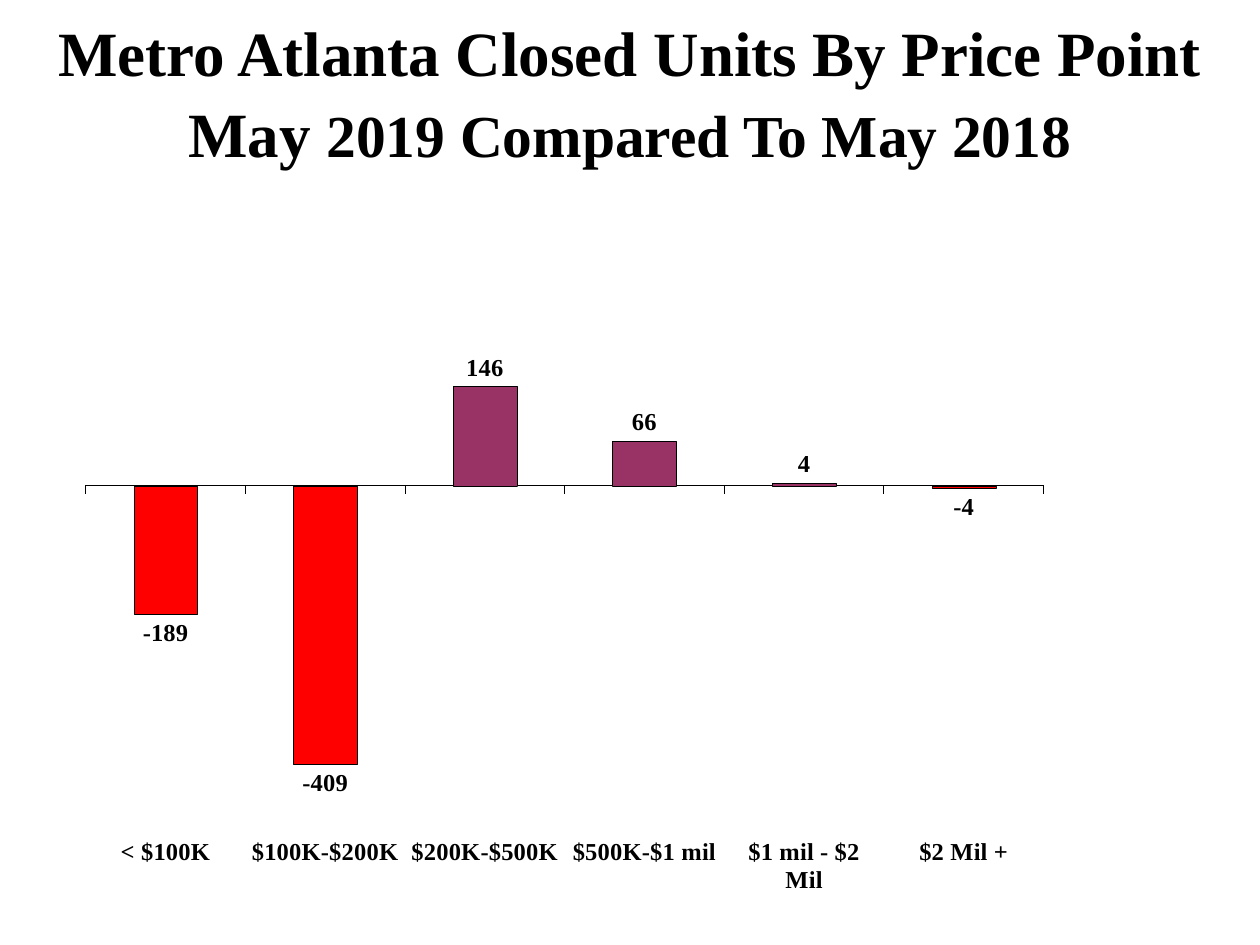
from lxml import etree
from pptx import Presentation
from pptx import util as u
from pptx.chart.data import CategoryChartData
from pptx.dml.color import RGBColor
from pptx.enum import chart as ch, text
from pptx.oxml.ns import qn

COLOURS = {"ink": "000000", "gain": "993366", "loss": "FF0000"}
CLOSED_UNITS = {
    "< $100K": -189,
    "$100K-$200K": -409,
    "$200K-$500K": 146,
    "$500K-$1 mil": 66,
    "$1 mil - $2 Mil": 4,
    "$2 Mil +": -4,
}


def colour(name):
    return RGBColor.from_string(COLOURS[name])


def set_font(font, size, bold=True, ink="ink", face="Times New Roman"):
    font.name, font.size, font.bold = face, u.Pt(size), bold
    font.color.rgb = colour(ink)


def write(paragraph, words, **style):
    run = paragraph.add_run()
    run.text = words
    set_font(run.font, **style)


class SlideBuilder:
    """Hold the slide and draw its heading and column chart."""

    def __init__(self, slide):
        self.slide = slide

    def heading(self, box, lines, spacing=1.07):
        frame = self.slide.shapes.add_textbox(*map(u.Pt, box)).text_frame
        frame.word_wrap = True
        frame.vertical_anchor = text.MSO_ANCHOR.MIDDLE
        paragraph = frame.paragraphs[0]
        paragraph.alignment = text.PP_ALIGN.CENTER
        paragraph.line_spacing = spacing
        for number, line in enumerate(lines):
            if number:
                paragraph.add_line_break()
            for words, size in line:
                write(paragraph, words, size=size)

    def columns(self, box, values, low, high, plot_area):
        data = CategoryChartData(number_format="0")
        data.categories = list(values)
        data.add_series("Series 1", list(values.values()))
        chart = self.slide.shapes.add_chart(
            ch.XL_CHART_TYPE.COLUMN_CLUSTERED, *map(u.Pt, box), data).chart
        chart.has_legend = chart.has_title = False
        set_font(chart.font, 14)
        self.axes(chart, low, high)
        self.bars(chart.plots[0], values.values())
        self.place_plot(chart, plot_area)

    def axes(self, chart, low, high):
        prices, units = chart.category_axis, chart.value_axis
        prices.tick_label_position = ch.XL_TICK_LABEL_POSITION.LOW
        prices.major_tick_mark = ch.XL_TICK_MARK.OUTSIDE
        prices.has_major_gridlines = units.has_major_gridlines = False
        prices.format.line.color.rgb = colour("ink")
        prices.format.line.width = u.Pt(0.01)
        units.minimum_scale, units.maximum_scale = low, high
        units.visible = False

    def bars(self, plot, values):
        plot.gap_width = 150
        plot.vary_by_categories = False
        plot.has_data_labels = True
        labels = plot.data_labels
        labels.show_value = True
        labels.number_format, labels.number_format_is_linked = "0", False
        labels.position = ch.XL_LABEL_POSITION.OUTSIDE_END
        set_font(labels.font, 14)
        series = plot.series[0]
        series.invert_if_negative = False
        self.paint(series.format, "gain")
        for index, value in enumerate(values):
            if value < 0:
                self.paint(series.points[index].format, "loss")

    def paint(self, look, fill):
        look.fill.solid()
        look.fill.fore_color.rgb = colour(fill)
        look.line.color.rgb = colour("ink")
        look.line.width = u.Pt(0.06)

    def place_plot(self, chart, plot_area):
        area = chart.plots[0]._element.getparent()
        for old in area.findall(qn("c:layout")):
            area.remove(old)
        layout = etree.Element(qn("c:layout"))
        area.insert(0, layout)
        manual = etree.SubElement(layout, qn("c:manualLayout"))
        settings = {"layoutTarget": "inner", "xMode": "edge", "yMode": "edge"}
        settings.update(zip("xywh", plot_area))
        for tag, value in settings.items():
            etree.SubElement(manual, qn(f"c:{tag}")).set("val", str(value))


def main():
    deck = Presentation()
    deck.slide_width, deck.slide_height = u.Pt(720), u.Pt(540)
    builder = SlideBuilder(deck.slides.add_slide(deck.slide_layouts[6]))
    builder.heading((0, 36, 720, 30), [
        [("Metro Atlanta Closed Units By Price Point", 36)],
        [("May ", 36), ("2019 Compared To May 2018", 34)],
    ])
    builder.columns((49, 118, 622, 392.5), CLOSED_UNITS, -500, 200,
                    (0, 0.21, 0.88, 0.7))
    deck.save("out.pptx")


if __name__ == "__main__":
    main()
